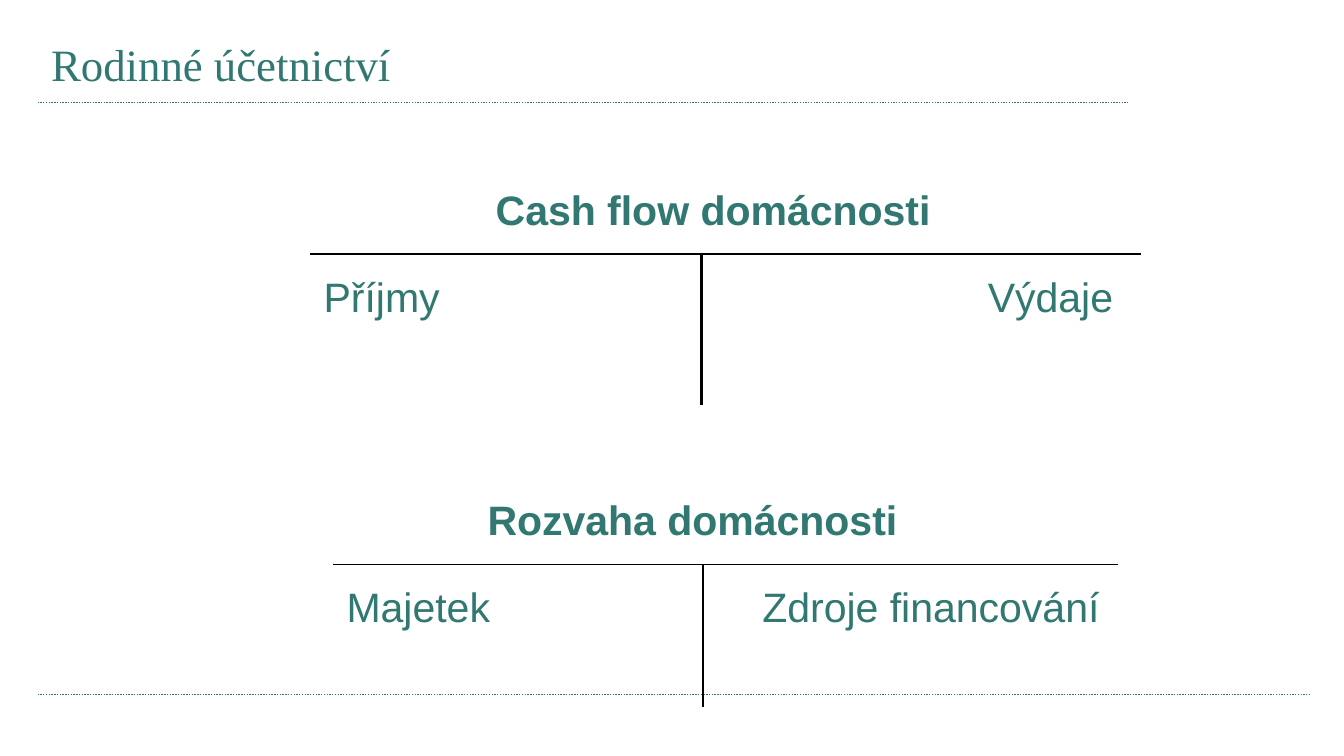
from lxml import etree
from pptx import Presentation
from pptx.dml.color import RGBColor
from pptx.enum.dml import MSO_LINE
from pptx.enum.shapes import MSO_CONNECTOR
from pptx.enum.text import MSO_ANCHOR, PP_ALIGN
from pptx.oxml.ns import qn
from pptx.util import Inches, Pt

STRAIGHT = MSO_CONNECTOR.STRAIGHT
DOTS = MSO_LINE.ROUND_DOT
MIDDLE, TOP = MSO_ANCHOR.MIDDLE, MSO_ANCHOR.TOP
LEFT, RIGHT, JUST = PP_ALIGN.LEFT, PP_ALIGN.RIGHT, PP_ALIGN.JUSTIFY

WIDE = Inches(10)
HIGH = WIDE * 9 // 16
CELL = WIDE / 100
COLORS = {"text": "307871", "rule": "000000"}


def grid(*cells):
    return [round(n * CELL) for n in cells]


def add_line(shapes, start, end, color, width, dash=None):
    line = shapes.add_connector(STRAIGHT, *grid(*start, *end))
    line.line.color.rgb = RGBColor.from_string(COLORS[color])
    line.line.width = Pt(width)
    if dash:
        line.line.dash_style = dash
    etree.SubElement(line._element.spPr, qn("a:effectLst"))


def set_text(shape, text, size, face, align, anchor, bold=False):
    frame = shape.text_frame
    frame.word_wrap = True
    frame.vertical_anchor = anchor
    frame.text = text
    para = frame.paragraphs[0]
    para.alignment = align
    font = para.font
    font.size, font.name, font.bold = Pt(size), face, bold
    font.color.rgb = RGBColor.from_string(COLORS["text"])


def add_label(shapes, box, text, align, bold=False):
    label = shapes.add_textbox(*grid(*box))
    set_text(label, text, 22, "Arial", align, TOP, bold)


def add_title(slide, text):
    title = slide.shapes.title
    title.left, title.top, title.width, title.height = grid(2.8, 1.9, 49.6, 5.6)
    set_text(title, text, 24, "Times New Roman", LEFT, MIDDLE)


def add_account(slide, left, top, width, weight, head, span, debit, credit, end):
    shapes = slide.shapes.add_group_shape().shapes
    scale = width / 61.8
    stem = left + 29.1 * scale
    row, tall = top + 0.8 * scale, 6.5 * scale
    start = left + 30.8 * scale
    add_line(shapes, (left, top), (left + width, top), "rule", weight)
    add_line(shapes, (stem, top), (stem, top + 11.2 * scale), "rule", weight)
    add_label(shapes, (left, row, 25.2 * scale, tall), debit, JUST)
    add_label(shapes, (start, row, end - start, tall), credit, RIGHT)
    add_label(shapes, (span[0], top - 5.7, span[1], 4.8 * scale), head, JUST, True)


def main():
    deck = Presentation()
    deck.slide_width, deck.slide_height = WIDE, HIGH
    slide = deck.slides.add_slide(deck.slide_layouts[5])
    for row, end in ((7.65, 83.9), (51.7, 97.5)):
        add_line(slide.shapes, (2.8, row), (end, row), "text", 0.75, DOTS)
    add_title(slide, "Rodinné účetnictví")
    add_account(slide, 23.1, 18.9, 61.8, 1.25, "Cash flow domácnosti",
                (35.9, 41.6), "Příjmy", "Výdaje", 83.8)
    add_account(slide, 24.8, 42, 58.4, 0.75, "Rozvaha domácnosti",
                (35.3, 38), "Majetek", "Zdroje financování", 82.8)
    deck.save("out.pptx")


if __name__ == "__main__":
    main()
